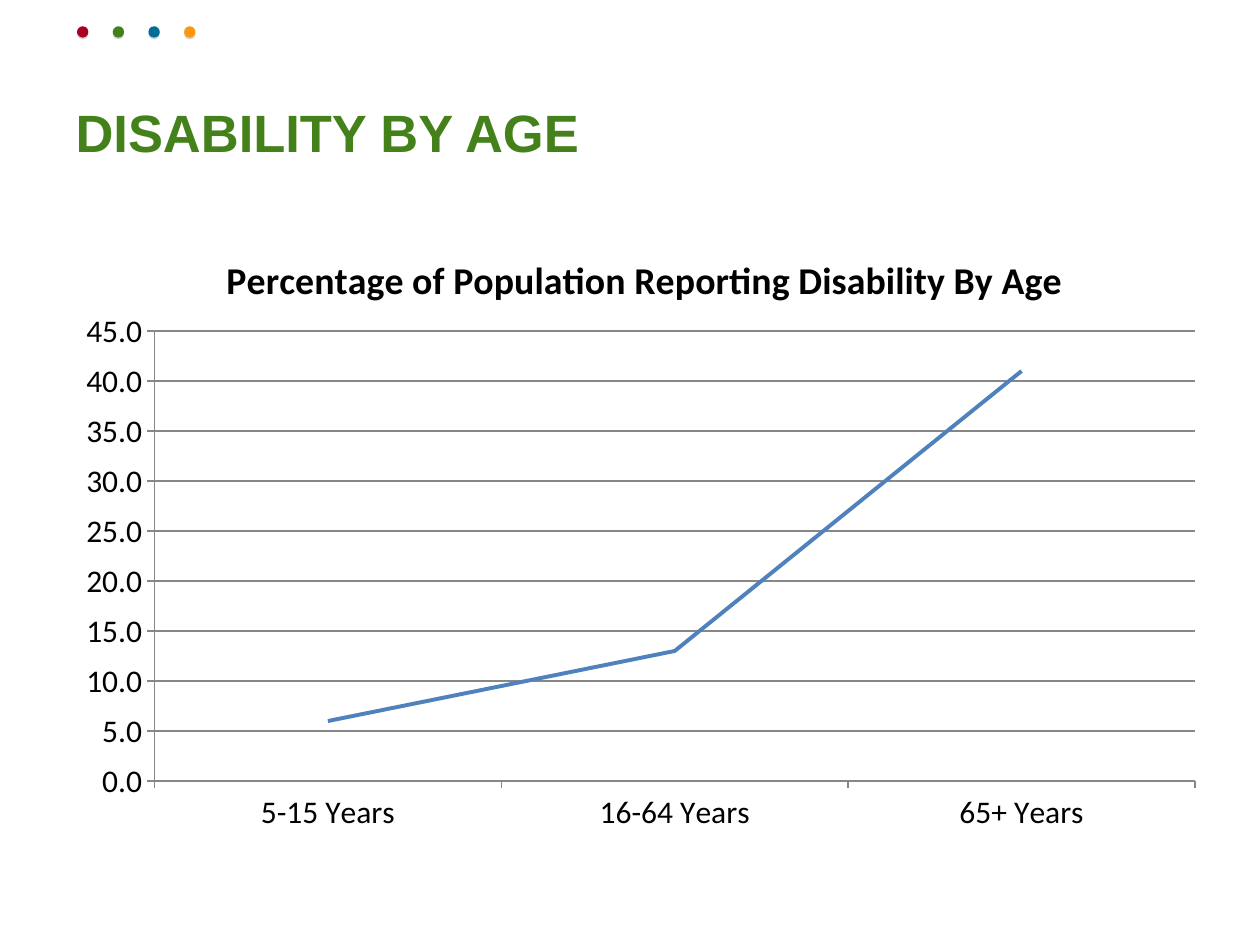
from lxml import etree
from pptx import Presentation
from pptx.chart.data import CategoryChartData
from pptx.dml.color import RGBColor
from pptx.enum.chart import XL_CHART_TYPE, XL_MARKER_STYLE, XL_TICK_MARK
from pptx.enum.shapes import MSO_SHAPE
from pptx.enum.text import MSO_ANCHOR, PP_ALIGN
from pptx.oxml import parse_xml
from pptx.oxml.ns import nsdecls, qn
from pptx.util import Pt

LINE_CHART = XL_CHART_TYPE.LINE
NO_MARKER = XL_MARKER_STYLE.NONE
TICK_OUTSIDE = XL_TICK_MARK.OUTSIDE
OVAL = MSO_SHAPE.OVAL
MIDDLE = MSO_ANCHOR.MIDDLE
LEFT = PP_ALIGN.LEFT

COLORS = {
    "red": "A90021",
    "green": "45811B",
    "blue": "006D97",
    "orange": "FD9712",
    "shadow": "808080",
    "series": "4F81BD",
    "axis": "878787",
    "text": "000000",
}
TITLE_LAYOUT = 5


def rgb(name):
    return RGBColor.from_string(COLORS[name])


def add_shadow(shape):
    """Give the shape a faint shadow one point below it."""
    shape.shadow.inherit = False
    effects = shape._element.spPr.find(qn("a:effectLst"))
    shadow = etree.SubElement(effects, qn("a:outerShdw"), blurRad="0",
                              dist=str(Pt(1)), dir="5400000", rotWithShape="0")
    color = etree.SubElement(shadow, qn("a:srgbClr"), val=COLORS["shadow"])
    etree.SubElement(color, qn("a:alpha"), val="35000")


def add_dots(page, left, top, size, step):
    group = page.shapes.add_group_shape()
    for index, name in enumerate(("red", "green", "blue", "orange")):
        dot = group.shapes.add_shape(
            OVAL, Pt(left + index * step), Pt(top), Pt(size), Pt(size))
        dot.fill.solid()
        dot.fill.fore_color.rgb = rgb(name)
        dot.line.fill.background()
        add_shadow(dot)


def set_title(page, left, top, width, height):
    title = page.shapes.title
    title.left, title.top = Pt(left), Pt(top)
    title.width, title.height = Pt(width), Pt(height)
    frame = title.text_frame
    frame.text = "DISABILITY BY AGE"
    frame.vertical_anchor = MIDDLE
    para = frame.paragraphs[0]
    para.alignment = LEFT
    para.font.name = "Arial"
    para.font.size = Pt(30)
    para.font.bold = True
    para.font.color.rgb = rgb("green")


def set_layout(element, index, target="", **places):
    """Fix a chart part at the given fractions of the chart's box."""
    for old in element.findall(qn("c:layout")):
        element.remove(old)
    values = "".join(f'<c:{key} val="{value}"/>'
                     for key, value in places.items())
    element.insert(index, parse_xml(
        f'<c:layout {nsdecls("c")}><c:manualLayout>{target}'
        '<c:xMode val="edge"/><c:yMode val="edge"/>'
        f'{values}</c:manualLayout></c:layout>'))


def style_line(line, color, width):
    line.color.rgb = rgb(color)
    line.width = Pt(width)


def add_age_chart(page, left, top, width, height):
    data = CategoryChartData(number_format="0.0")
    data.categories = ["5-15 Years", "16-64 Years", "65+ Years"]
    data.add_series("Series 1", (6, 13, 41))
    chart = page.shapes.add_chart(
        LINE_CHART, Pt(left), Pt(top), Pt(width), Pt(height), data).chart
    chart.has_legend = False
    chart.font.name = "Calibri"
    chart.font.size = Pt(18)
    chart.font.color.rgb = rgb("text")

    chart.has_title = True
    frame = chart.chart_title.text_frame
    frame.text = "Percentage of Population Reporting Disability By Age"
    font = frame.paragraphs[0].font
    font.name = "Calibri"
    font.size = Pt(21.6)
    font.bold = True
    font.color.rgb = rgb("text")
    chart.chart_title.include_in_layout = False
    set_layout(chart.chart_title._element, 1, x=89.5 / width, y=15 / height)
    set_layout(chart._chartSpace.chart.plotArea, 0,
               '<c:layoutTarget val="inner"/>',
               x=52.3 / width, y=63.2 / height,
               w=594.6 / width, h=257.2 / height)

    for axis in (chart.category_axis, chart.value_axis):
        axis.major_tick_mark = TICK_OUTSIDE
        style_line(axis.format.line, "axis", 0.75)
    values = chart.value_axis
    values.minimum_scale, values.maximum_scale = 0, 45
    values.major_unit = 5
    values.tick_labels.number_format = "0.0"
    values.tick_labels.number_format_is_linked = False
    values.has_major_gridlines = True
    style_line(values.major_gridlines.format.line, "axis", 0.75)

    chart.plots[0].vary_by_categories = False
    series = chart.plots[0].series[0]
    series.smooth = False
    series.marker.style = NO_MARKER
    style_line(series.format.line, "series", 2.25)


def main():
    deck = Presentation()
    deck.slide_width, deck.slide_height = Pt(720), Pt(540)
    page = deck.slides.add_slide(deck.slide_layouts[TITLE_LAYOUT])
    add_dots(page, 44, 15, 6.5, 20.4)
    set_title(page, 36, 30, 660, 90)
    add_age_chart(page, 36, 126, 660, 356.4)
    deck.save("out.pptx")


if __name__ == "__main__":
    main()
